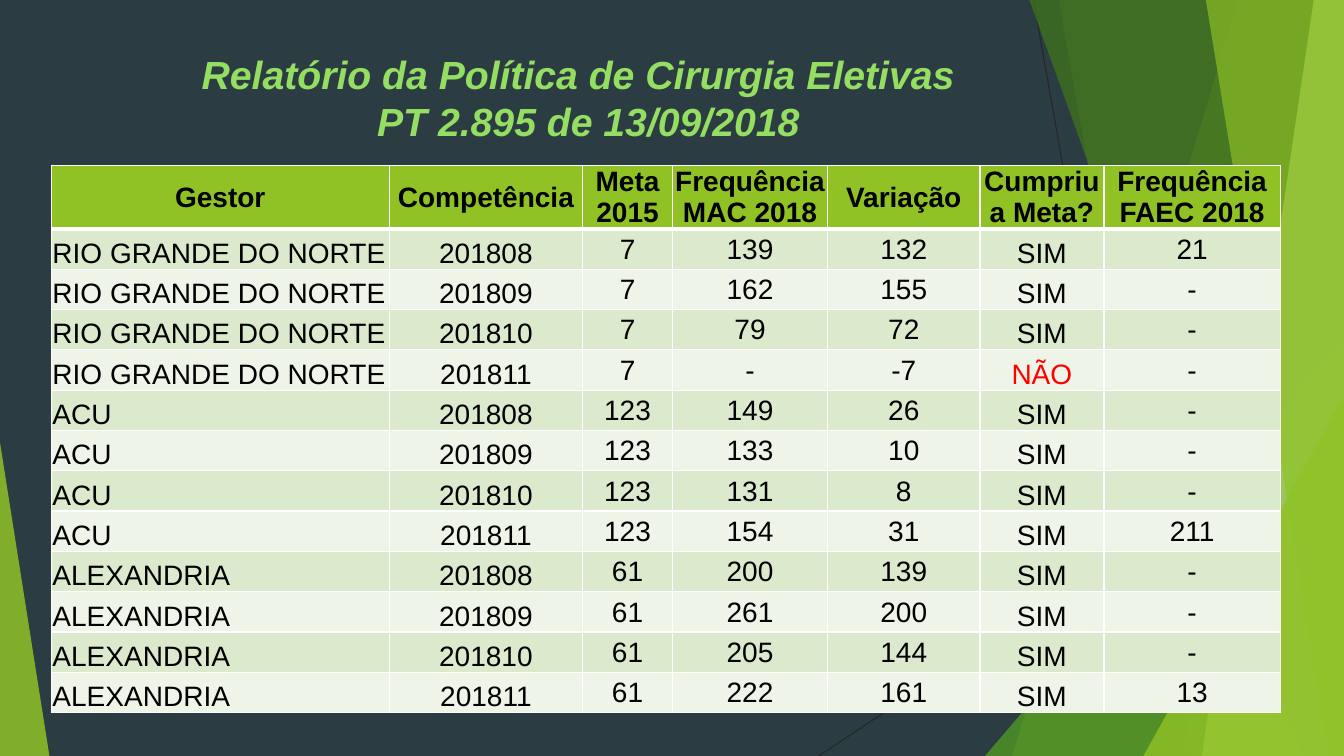
from lxml import etree
from pptx import Presentation
from pptx.dml.color import RGBColor
from pptx.enum.shapes import MSO_CONNECTOR, MSO_SHAPE
from pptx.enum.text import MSO_ANCHOR, MSO_AUTO_SIZE, PP_ALIGN
from pptx.oxml.ns import qn
from pptx.util import Inches, Pt

LEFT, CENTER = PP_ALIGN.LEFT, PP_ALIGN.CENTER
TOP, MIDDLE, BOTTOM = MSO_ANCHOR.TOP, MSO_ANCHOR.MIDDLE, MSO_ANCHOR.BOTTOM
STRAIGHT, TRIANGLE = MSO_CONNECTOR.STRAIGHT, MSO_SHAPE.ISOSCELES_TRIANGLE
NO_FIT = MSO_AUTO_SIZE.NONE

WIDE, HIGH = 13.33, 7.5
FONT = "Arial"
TITLE = [
    ("Relatório da Política de Cirurgia Eletivas", LEFT),
    ("PT 2.895 de 13/09/2018", CENTER),
]
HEADS = ["Gestor", "Competência", "Meta\n2015", "Frequência MAC 2018",
         "Variação", "Cumpriu a Meta?", "Frequência FAEC 2018"]
MONTHS = ["201808", "201809", "201810", "201811"]
CITIES = [
    ("RIO GRANDE DO NORTE", "7", [
        ("139", "132", "SIM", "21"), ("162", "155", "SIM", "-"),
        ("79", "72", "SIM", "-"), ("-", "-7", "NÃO", "-")]),
    ("ACU", "123", [
        ("149", "26", "SIM", "-"), ("133", "10", "SIM", "-"),
        ("131", "8", "SIM", "-"), ("154", "31", "SIM", "211")]),
    ("ALEXANDRIA", "61", [
        ("200", "139", "SIM", "-"), ("261", "200", "SIM", "-"),
        ("205", "144", "SIM", "-"), ("222", "161", "SIM", "13")]),
]
COLS = [3.35, 1.92, 0.89, 1.54, 1.51, 1.23, 1.75]
HEAD_ROW, BODY_ROW = 0.62, 0.4
LOW_COLS = (0, 1, 5)
BANDS = ["DBE9CD", "EEF4E8"]

LINES = [(10.25, 0, 11.58, HIGH), (WIDE, 4.03, 8.12, HIGH)]
DECOR = [
    ("panel", (12.28, 10.04), "90C226", 30),
    ("panel", (10.5, 11.83), "90C226", 20),
    ("peak", (9.77, 3.33, 3.56, 1), "54A021", 72),
    ("panel", (10.21, 12.91), "3F7819", 70),
    ("panel", (13.03, 11.92), "C0E474", 70),
    ("panel", (11.96, 13.18), "90C226", 65),
    ("peak", (11.34, 3.93, 1.99, 1), "90C226", 80),
    ("peak", (0, 4.39, 0.49, 0), "90C226", 85),
]


def paint(fmt, color, alpha=100):
    fmt.solid()
    fmt.fore_color.rgb = RGBColor.from_string(color)
    if alpha < 100:
        tint = fmt._xPr.find(qn("a:solidFill"))[0]
        etree.SubElement(tint, qn("a:alpha"), val=str(alpha * 1000))


def style(para, size, color, align, bold):
    para.alignment = align
    font = para.font
    font.name, font.size, font.bold = FONT, Pt(size), bold
    paint(font.fill, color)


def add_line(shapes, ends):
    line = shapes.add_connector(STRAIGHT, *map(Inches, ends))
    line.line.width = Pt(0.75)
    paint(line.line.fill, "262626")
    etree.SubElement(line._element.spPr, qn("a:effectLst"))


def add_decor(shapes, kind, place, color, alpha):
    if kind == "panel":
        top, base = place
        pen = shapes.build_freeform(Inches(top), 0)
        pen.add_line_segments([(Inches(x), Inches(y)) for x, y in
                               [(WIDE, 0), (WIDE, HIGH), (base, HIGH)]])
        shape = pen.convert_to_shape()
    else:
        x, y, width, tip = place
        shape = shapes.add_shape(TRIANGLE, *map(Inches, (x, y, width, HIGH - y)))
        shape.adjustments[0] = tip
    shape.shadow.inherit = False
    paint(shape.fill, color, alpha)
    shape.line.fill.background()


def add_edges(cell, base):
    props = cell._tc.get_or_add_tcPr()
    sides = [("L", 1), ("R", 1), ("T", 1), ("B", base)]
    for at, (side, width) in enumerate(sides):
        edge = etree.Element(qn(f"a:ln{side}"), w=str(Pt(width)))
        fill = etree.SubElement(edge, qn("a:solidFill"))
        etree.SubElement(fill, qn("a:srgbClr"), val="FFFFFF")
        props.insert(at, edge)


def fill_cell(cell, text, row, col):
    head = row == 0
    cell.margin_left = cell.margin_right = cell.margin_top = Inches(0.01)
    cell.margin_bottom = 0
    cell.vertical_anchor = BOTTOM if not head and col in LOW_COLS else MIDDLE
    cell.text = text
    align = LEFT if not head and col == 0 else CENTER
    color = "FF0000" if text == "NÃO" else "000000"
    for para in cell.text_frame.paragraphs:
        style(para, 20, color, align, head)
    paint(cell.fill, "90C226" if head else BANDS[(row - 1) % 2])
    add_edges(cell, 3 if head else 1)


def add_grid(shapes):
    rows = [HEADS] + [
        (city, month, goal, *data)
        for city, goal, stats in CITIES
        for month, data in zip(MONTHS, stats)
    ]
    tall = [HEAD_ROW] + [BODY_ROW] * (len(rows) - 1)
    box = map(Inches, (0.51, 1.64, sum(COLS), sum(tall)))
    grid = shapes.add_table(len(rows), len(COLS), *box).table
    grid.horz_banding = False
    for col, width in zip(grid.columns, COLS):
        col.width = Inches(width)
    for r, texts in enumerate(rows):
        grid.rows[r].height = Inches(tall[r])
        for c, text in enumerate(texts):
            fill_cell(grid.cell(r, c), text, r, c)


def set_title(title):
    title.left, title.top, title.width, title.height = map(
        Inches, (1.9, 0.45, 7.87, 1.04))
    frame = title.text_frame
    frame.text = "\n".join(text for text, _ in TITLE)
    frame.word_wrap = True
    frame.auto_size = NO_FIT
    frame.vertical_anchor = TOP
    for para, (_, align) in zip(frame.paragraphs, TITLE):
        style(para, 28, "94DE61", align, True)
        para.font.italic = True


def main():
    deck = Presentation()
    deck.slide_width, deck.slide_height = Inches(WIDE), Inches(HIGH)
    slide = deck.slides.add_slide(deck.slide_layouts[5])
    paint(slide.background.fill, "2C3C43")
    for ends in LINES:
        add_line(slide.shapes, ends)
    for item in DECOR:
        add_decor(slide.shapes, *item)
    add_grid(slide.shapes)
    set_title(slide.shapes.title)
    deck.save("out.pptx")


if __name__ == "__main__":
    main()
